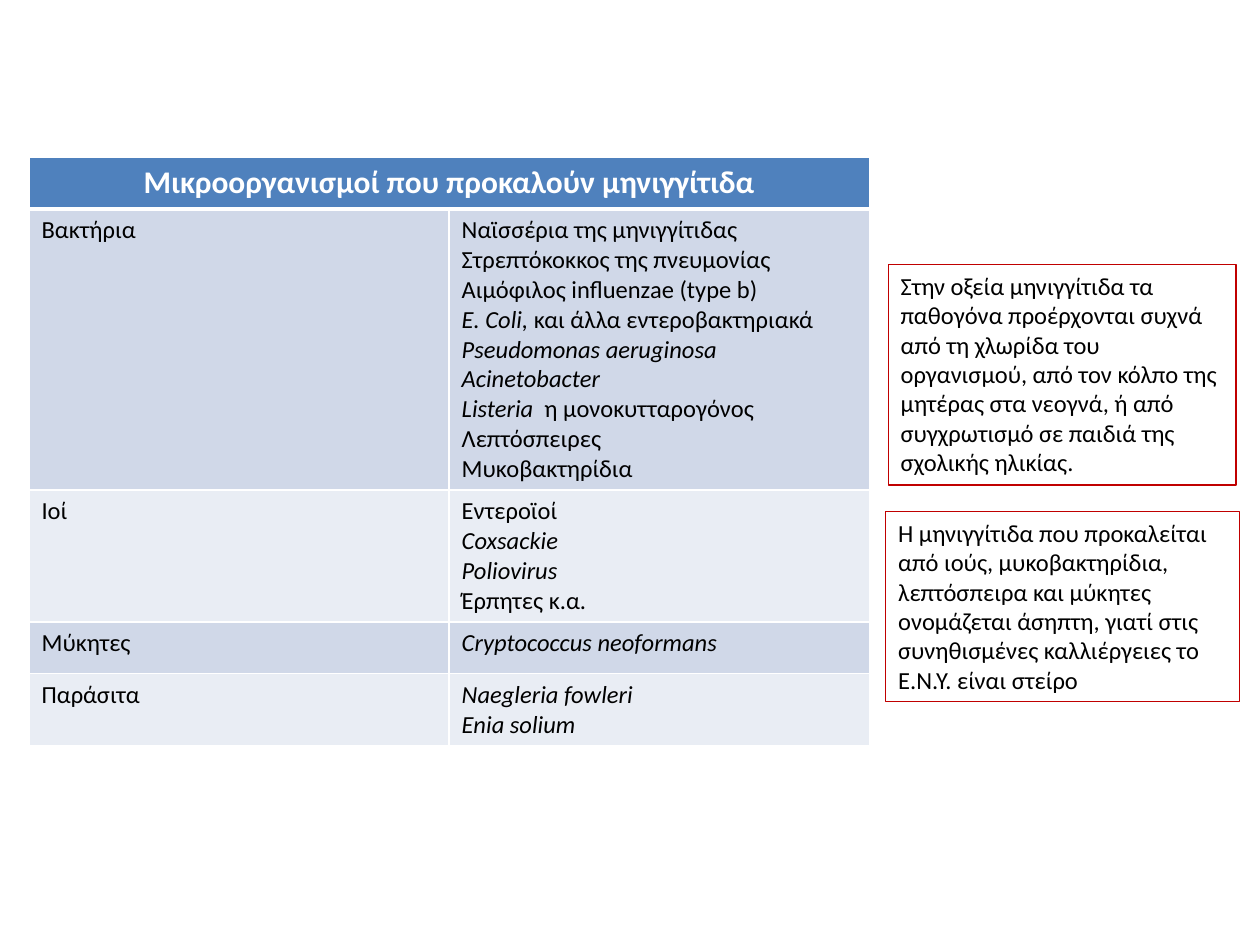
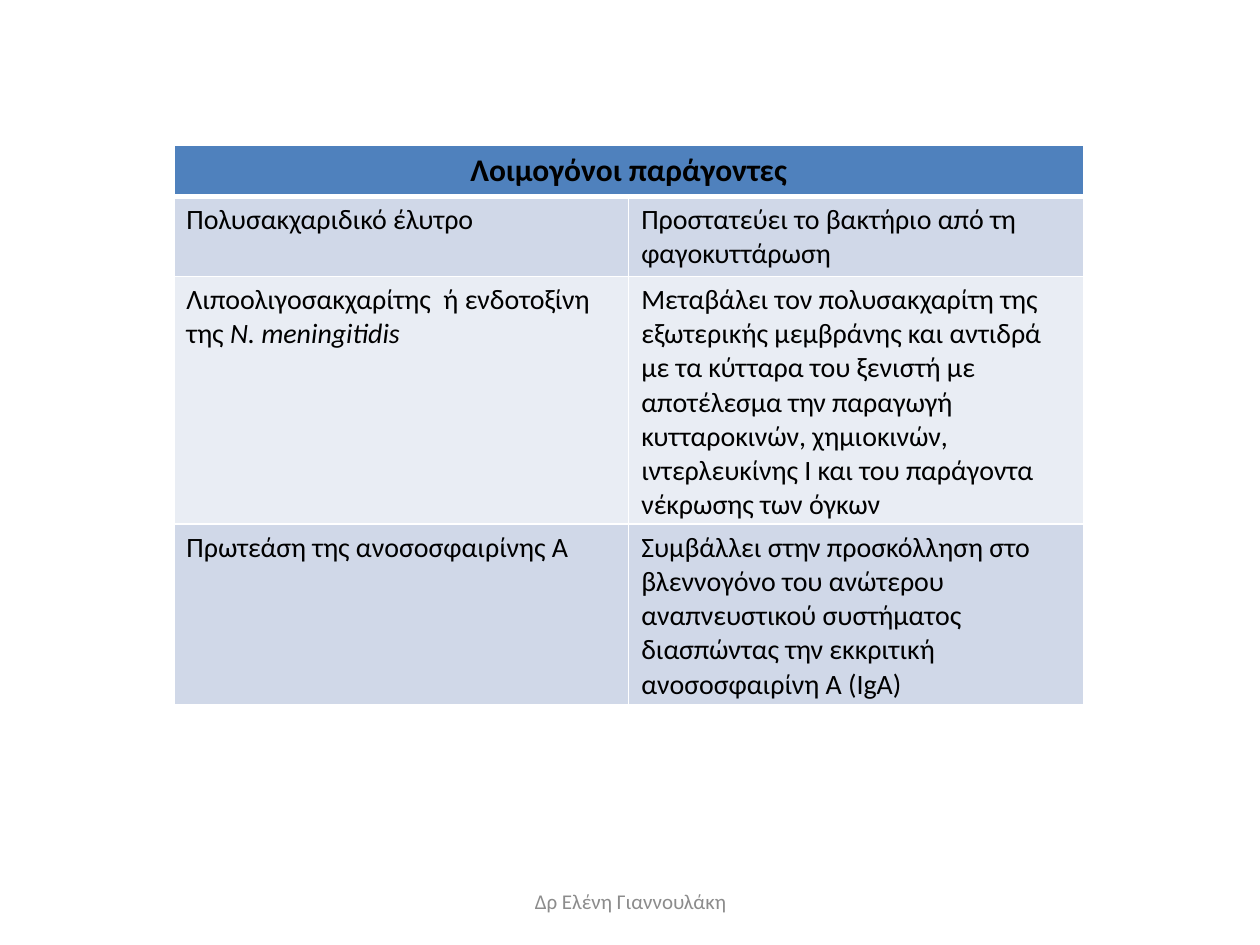
"""Builds two slides on the microorganisms and virulence factors of meningitis."""
import pptx
import pptx.dml.color
import pptx.enum.text
import pptx.oxml
import pptx.oxml.ns
import pptx.util

ALIGN = pptx.enum.text.PP_ALIGN
ANCHOR = pptx.enum.text.MSO_ANCHOR
AUTO_SIZE = pptx.enum.text.MSO_AUTO_SIZE

GRID_COLUMNS, GRID_ROWS = 100, 75
FONT = "Calibri"
BLACK, WHITE, GREY, RED = "000000", "FFFFFF", "8C8C8C", "C00000"
HEADER_FILL = "4F81BD"
BAND_FILLS = ("D0D8E8", "E9EDF4")
HEADER_HEIGHT = 4.1


def color(value):
    return pptx.dml.color.RGBColor.from_string(value)


class Deck:
    """Holds the style and the current slide."""

    def __init__(self):
        self.presentation = pptx.Presentation()
        self.presentation.slide_width = pptx.util.Inches(10)
        self.presentation.slide_height = pptx.util.Inches(7.5)
        self.slide = None

    def add_slide(self):
        self.slide = self.presentation.slides.add_slide(self.presentation.slide_layouts[6])

    def across(self, columns):
        return round(self.presentation.slide_width * columns / GRID_COLUMNS)

    def down(self, rows):
        return round(self.presentation.slide_height * rows / GRID_ROWS)

    def fill_text(self, frame, text, size, text_color=BLACK, bold=False, align=ALIGN.LEFT):
        """Fills a frame, one paragraph a line, with *...* in italics."""
        for index, line in enumerate(text.split("\n")):
            paragraph = frame.paragraphs[0] if index == 0 else frame.add_paragraph()
            paragraph.alignment = align
            for part, words in enumerate(line.split("*")):
                if not words:
                    continue
                run = paragraph.add_run()
                run.text = words
                run.font.color.rgb = color(text_color)
                font_format = {"name": FONT, "size": pptx.util.Pt(size),
                               "bold": bold, "italic": part % 2 == 1}
                for name, value in font_format.items():
                    setattr(run.font, name, value)

    def text_box(self, left, top, width, height, text, size, outline=None,
                 auto_size=AUTO_SIZE.NONE, anchor=ANCHOR.TOP, **text_format):
        shape = self.slide.shapes.add_textbox(
            self.across(left), self.down(top), self.across(width), self.down(height))
        frame_format = {"word_wrap": True, "auto_size": auto_size, "vertical_anchor": anchor}
        for name, value in frame_format.items():
            setattr(shape.text_frame, name, value)
        if outline:
            shape.line.color.rgb = color(outline)
            shape.line.width = pptx.util.Pt(0.75)
        self.fill_text(shape.text_frame, text, size, **text_format)

    def note(self, left, top, width, height, text):
        self.text_box(left, top, width, height, text, 14, outline=RED,
                      auto_size=AUTO_SIZE.SHAPE_TO_FIT_TEXT)

    def footer(self, text):
        self.text_box(34.2, 69.5, 31.7, 4, text, 12, anchor=ANCHOR.MIDDLE,
                      text_color=GREY, align=ALIGN.CENTER)

    def cell_style(self, cell, fill, top=1, bottom=1):
        properties = cell._tc.get_or_add_tcPr()
        for side, points in {"L": 1, "R": 1, "T": top, "B": bottom}.items():
            properties.append(pptx.oxml.parse_xml(
                f'<a:ln{side} {pptx.oxml.ns.nsdecls("a")} w="{pptx.util.Pt(points)}">'
                f'<a:solidFill><a:srgbClr val="{WHITE}"/></a:solidFill></a:ln{side}>'))
        cell.fill.solid()
        cell.fill.fore_color.rgb = color(fill)

    def table(self, left, top, width, title, title_color, size, body):
        """Draws a titled table; each body row is (line count, name, details)."""
        heights = [HEADER_HEIGHT] + [
            max(HEADER_HEIGHT, 1 + lines * size / 6) for lines, *_ in body]
        table = self.slide.shapes.add_table(
            len(heights), 2, self.across(left), self.down(top),
            self.across(width), self.down(sum(heights))).table
        for row, height in zip(table.rows, heights):
            row.height = self.down(height)
        for cell in table.rows[0].cells:
            self.cell_style(cell, HEADER_FILL, bottom=3)
        table.cell(0, 0).merge(table.cell(0, 1))
        self.fill_text(table.cell(0, 0).text_frame, title, 18, title_color, True, ALIGN.CENTER)
        for index, (_, *texts) in enumerate(body):
            for column, text in enumerate(texts):
                cell = table.cell(index + 1, column)
                self.cell_style(cell, BAND_FILLS[index % 2], top=1 if index else 3)
                self.fill_text(cell.text_frame, text, size)


MICROORGANISMS = [
    (9, "Βακτήρια", "Ναϊσσέρια της μηνιγγίτιδας\nΣτρεπτόκοκκος της πνευμονίας\n"
     "Αιμόφιλος influenzae (type b)\n*E. Coli, *και άλλα εντεροβακτηριακά\n"
     "*Pseudomonas aeruginosa*\n*Acinetobacter*\n*Listeria  *η μονοκυτταρογόνος\n"
     "Λεπτόσπειρες\nΜυκοβακτηρίδια"),
    (4, "Ιοί", "Εντεροϊοί\n*Coxsackie*\n*Poliovirus*\nΈρπητες κ.α."),
    (1, "Μύκητες", "*Cryptococcus neoformans*"),
    (2, "Παράσιτα", "*Naegleria fowleri*\n*Enia solium*"),
]

VIRULENCE_FACTORS = [
    (2, "Πολυσακχαριδικό έλυτρο", "Προστατεύει το βακτήριο από τη φαγοκυττάρωση"),
    (7, "Λιποολιγοσακχαρίτης  ή ενδοτοξίνη της *N. meningitidis*",
     "Μεταβάλει τον πολυσακχαρίτη της εξωτερικής μεμβράνης και αντιδρά με τα κύτταρα "
     "του ξενιστή με αποτέλεσμα την παραγωγή κυτταροκινών, χημιοκινών, ιντερλευκίνης Ι "
     "και του παράγοντα νέκρωσης των όγκων"),
    (5, "Πρωτεάση της ανοσοσφαιρίνης Α",
     "Συμβάλλει στην προσκόλληση στο βλεννογόνο του ανώτερου αναπνευστικού συστήματος "
     "διασπώντας την εκκριτική ανοσοσφαιρίνη Α (IgA)"),
]


def main():
    deck = Deck()

    deck.add_slide()
    deck.table(2.3, 12.5, 66.7, "Μικροοργανισμοί που προκαλούν μηνιγγίτιδα",
               WHITE, 14, MICROORGANISMS)
    deck.note(70.3, 40.6, 28.1, 15.1,
              "Η μηνιγγίτιδα που προκαλείται από ιούς, μυκοβακτηρίδια, λεπτόσπειρα και "
              "μύκητες ονομάζεται άσηπτη, γιατί στις συνηθισμένες καλλιέργειες το Ε.Ν.Υ. "
              "είναι στείρο")
    deck.note(70.5, 21, 27.6, 17.5,
              "Στην οξεία μηνιγγίτιδα τα παθογόνα προέρχονται συχνά από τη χλωρίδα του "
              "οργανισμού, από τον κόλπο της μητέρας στα νεογνά, ή από συγχρωτισμό σε "
              "παιδιά της σχολικής ηλικίας.")

    deck.add_slide()
    deck.footer("Δρ Ελένη Γιαννουλάκη")
    deck.table(13.8, 11.5, 72.2, "Λοιμογόνοι παράγοντες", BLACK, 16, VIRULENCE_FACTORS)

    deck.presentation.save("out.pptx")


if __name__ == "__main__":
    main()
